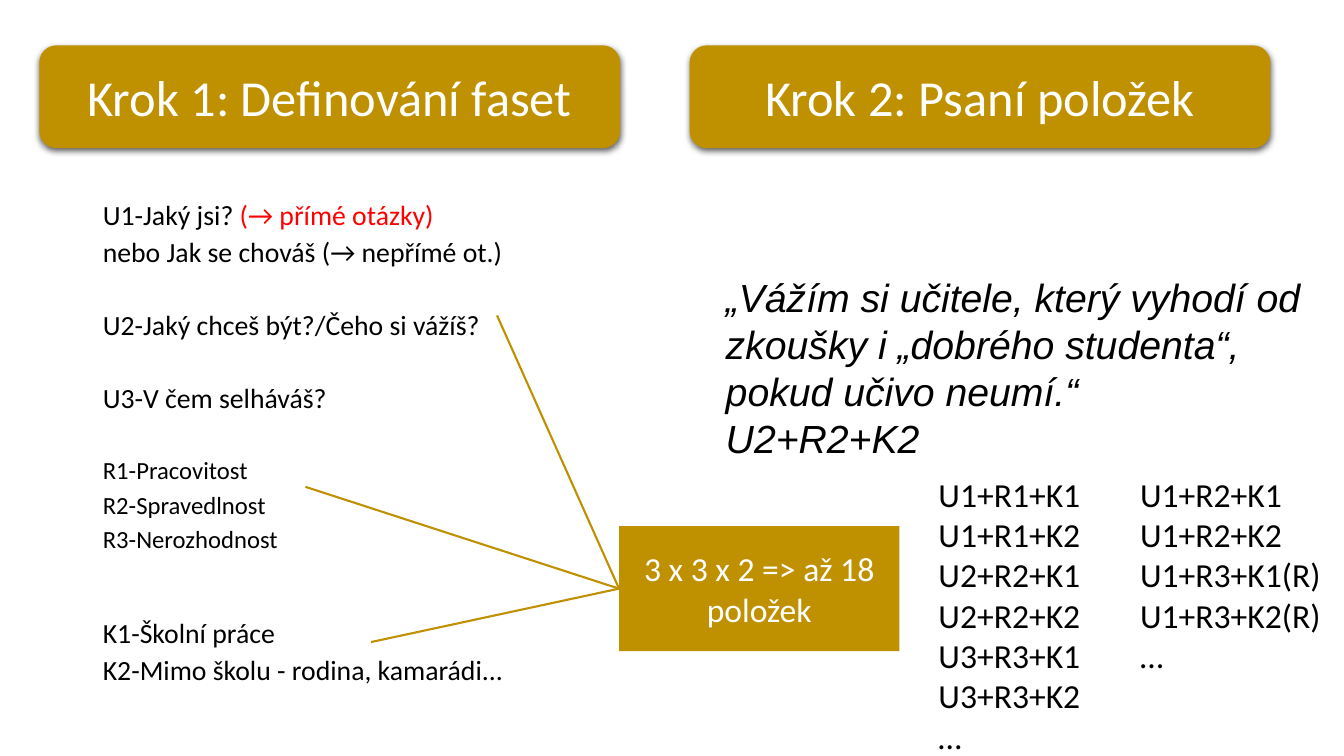
"""Build the slide on defining facets and writing questionnaire items."""
from lxml import etree
from pptx import Presentation
from pptx.dml.color import RGBColor
from pptx.enum.shapes import MSO_CONNECTOR, MSO_SHAPE
from pptx.enum.text import MSO_ANCHOR, MSO_AUTO_SIZE, PP_ALIGN
from pptx.oxml.ns import qn
from pptx.util import Emu, Pt

PX = 9144
STRAIGHT = MSO_CONNECTOR.STRAIGHT
RECTANGLE, ROUNDED = MSO_SHAPE.RECTANGLE, MSO_SHAPE.ROUNDED_RECTANGLE
MIDDLE, CENTER, NO_FIT = MSO_ANCHOR.MIDDLE, PP_ALIGN.CENTER, MSO_AUTO_SIZE.NONE
GOLD, WHITE, BLACK, RED = "BF9000", "FFFFFF", "000000", "FF0000"


def color(hex_code):
    return RGBColor.from_string(hex_code)


def style(paragraph, size, hex_code, font_name="Calibri"):
    paragraph.font.size = Pt(size)
    paragraph.font.name = font_name
    paragraph.font.color.rgb = color(hex_code)


prs = Presentation()
prs.slide_width, prs.slide_height = Emu(1333 * PX), Emu(750 * PX)
slide = prs.slides.add_slide(prs.slide_layouts[1])
shapes = slide.shapes
unused_title = shapes.title.element
unused_title.getparent().remove(unused_title)

facets = slide.placeholders[1]
facets.left, facets.top = Emu(92 * PX), Emu(200 * PX)
facets.width, facets.height = Emu(1150 * PX), Emu(519 * PX)
facets.text_frame.auto_size = NO_FIT
facet_lines = [
    (["U1-Jaký jsi? ", "(→ přímé otázky)"], 19.8, 10),
    (["nebo Jak se chováš (→ nepřímé ot.)"], 19.8, 10),
    (["U2-Jaký chceš být?/Čeho si vážíš?"], 19.8, 35.5),
    (["U3-V čem selháváš?"], 19.8, 35.5),
    (["R1-Pracovitost"], 17.6, 35.5),
    (["R2-Spravedlnost"], 17.6, 10),
    (["R3-Nerozhodnost"], 17.6, 10),
    (["K1-Školní práce"], 19.8, 51),
    (["K2-Mimo školu - rodina, kamarádi..."], 19.8, 10),
]
for index, (parts, size, gap) in enumerate(facet_lines):
    frame = facets.text_frame
    line = frame.add_paragraph() if index else frame.paragraphs[0]
    for part, hex_code in zip(parts, (BLACK, RED)):
        run = line.add_run()
        run.text = part
        run.font.color.rgb = color(hex_code)
    line.line_spacing = 0.7
    line.space_before = Pt(gap)
    properties = line._p.get_or_add_pPr()
    properties.set("marL", "0")
    properties.set("indent", "0")
    etree.SubElement(properties, qn("a:buNone"))
    style(line, size, BLACK)

boxes = [
    ("Krok 1: Definování faset", ROUNDED, 39, 45, 576, 102, 36),
    ("Krok 2: Psaní položek", ROUNDED, 684, 45, 576, 102, 36),
    ("3 x 3 x 2 => až 18 položek", RECTANGLE, 614, 522, 278, 124, 24),
]
for caption, outline, left, top, width, height, size in boxes:
    box = shapes.add_shape(outline, left * PX, top * PX, width * PX, height * PX)
    box.fill.solid()
    box.fill.fore_color.rgb = color(GOLD)
    box.line.fill.background()
    box.shadow.inherit = False
    if outline == ROUNDED:
        effects = box._element.spPr.find(qn("a:effectLst"))
        shadow = etree.SubElement(effects, qn("a:outerShdw"), blurRad="57150",
                                  dist="19050", dir="5400000", algn="ctr", rotWithShape="0")
        black = etree.SubElement(shadow, qn("a:srgbClr"), val=BLACK)
        etree.SubElement(black, qn("a:alpha"), val="63000")
    box.text_frame.word_wrap = True
    box.text_frame.vertical_anchor = MIDDLE
    label = box.text_frame.paragraphs[0]
    label.text = caption
    label.alignment = CENTER
    style(label, size, WHITE)

item_lists = [
    (["„Vážím si učitele, který vyhodí od zkoušky i „dobrého studenta“, pokud učivo neumí.“",
      "U2+R2+K2"], 710, 266, 624, 199, 28, "Arial", True),
    (["U1+R1+K1", "U1+R1+K2", "U2+R2+K1", "U2+R2+K2", "U3+R3+K1", "U3+R3+K2", "…"],
     921, 465, 200, 293, 24, "Calibri", False),
    (["U1+R2+K1", "U1+R2+K2", "U1+R3+K1(R)", "U1+R3+K2(R)", "…"],
     1121, 465, 200, 212, 24, "Calibri", False),
]
for items, left, top, width, height, size, font_name, italic in item_lists:
    frame = shapes.add_textbox(left * PX, top * PX, width * PX, height * PX).text_frame
    frame.word_wrap = True
    frame.text = "\n".join(items)
    for item in frame.paragraphs:
        style(item, size, BLACK, font_name)
        item.font.italic = italic

for facet_x, facet_y in [(493, 313), (368, 637), (303, 483)]:
    link = shapes.add_connector(STRAIGHT, facet_x * PX, facet_y * PX, 614 * PX, 584 * PX)
    link.line.color.rgb = color(GOLD)
    link.line.width = Pt(1.5)
    etree.SubElement(link._element.spPr, qn("a:effectLst"))

prs.save("out.pptx")
